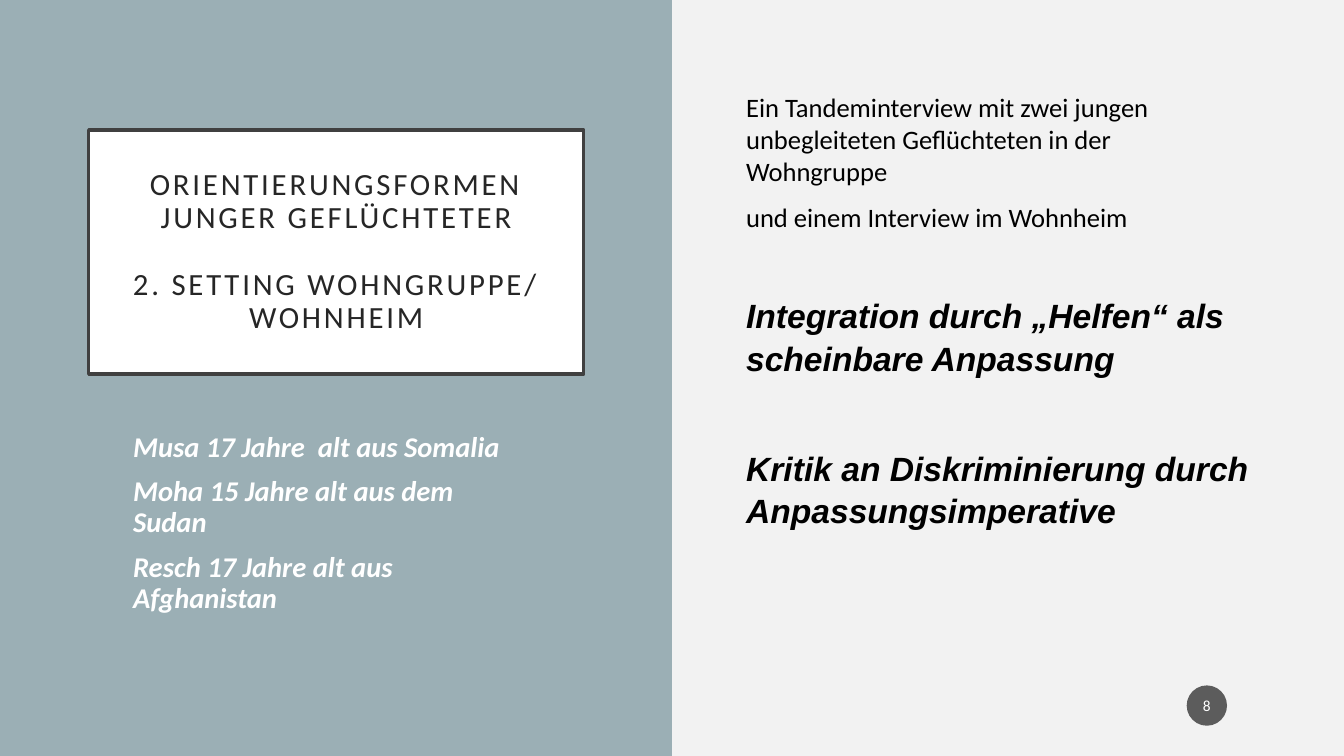
"""Builds the slide on orientation of young refugees in shared housing."""
from lxml import etree
from pptx import Presentation, util as u
from pptx.dml.color import RGBColor
from pptx.enum import shapes, text
from pptx.oxml.ns import qn

W, H = 13.33, 7.5
TITLE = ["ORIENTIERUNGSFORMEN JUNGER GEFLÜCHTETER", "2. SETTING WOHNGRUPPE/ WOHNHEIM"]
PEOPLE = ["Musa 17 Jahre  alt aus Somalia", "Moha 15 Jahre alt aus dem Sudan",
          "Resch 17 Jahre alt aus Afghanistan"]
INTRO = ["Ein Tandeminterview mit zwei jungen unbegleiteten Geflüchteten in der Wohngruppe",
         "und einem Interview im Wohnheim"]
THESES = ["Integration durch „Helfen“ als scheinbare Anpassung",
          "Kritik an Diskriminierung durch Anpassungsimperative"]
NUMBER = "8"

PLAIN = dict(size=19, color="000000", before=10)
THESIS = dict(size=24, color="000000", font="Arial", strong=True, line=1.06)
PERSON = dict(size=20.4, color="FFFFFF", strong=True, line=0.9, before=10)
HEADING = dict(size=22, color="262626", line=0.9, align=text.PP_ALIGN.CENTER)
BADGE = dict(size=11, color="FFFFFF", align=text.PP_ALIGN.CENTER)


def rgb(value):
    return RGBColor.from_string(value)


def place(sp, left, top, width, height):
    sp.left, sp.top, sp.width, sp.height = map(u.Inches, (left, top, width, height))


def write(sp, items, anchor=text.MSO_ANCHOR.TOP, insets=(0.1, 0.05, 0.1, 0.05)):
    tf = sp.text_frame
    tf.word_wrap, tf.auto_size, tf.vertical_anchor = True, text.MSO_AUTO_SIZE.NONE, anchor
    tf.margin_left, tf.margin_top, tf.margin_right, tf.margin_bottom = map(u.Inches, insets)
    for i, (words, style) in enumerate(items):
        p = tf.paragraphs[0] if i == 0 else tf.add_paragraph()
        p.text = words
        p.alignment = style.get("align", text.PP_ALIGN.LEFT)
        p.line_spacing = style.get("line", 1.0)
        p.space_before = u.Pt(style.get("before", 0) if i else 0)
        p.space_after = u.Pt(0)
        p.font.name, p.font.size = style.get("font", "Calibri"), u.Pt(style["size"])
        p.font.bold = p.font.italic = style.get("strong", False)
        p.font.color.rgb = rgb(style["color"])
        pPr = p._p.get_or_add_pPr()
        pPr.set("marL", "0")
        pPr.set("indent", "0")
        bullet = etree.Element(qn("a:buNone"))
        pPr.find(qn("a:defRPr")).addprevious(bullet)


def add_shape(s, kind, box, color):
    sp = s.shapes.add_shape(kind, *map(u.Inches, box))
    sp.shadow.inherit = False
    sp.fill.solid()
    sp.fill.fore_color.rgb = rgb(color)
    sp.line.fill.background()
    return sp


def main():
    prs = Presentation()
    prs.slide_width, prs.slide_height = u.Inches(W), u.Inches(H)
    s = prs.slides.add_slide(prs.slide_layouts[7])
    s.background.fill.solid()
    s.background.fill.fore_color.rgb = rgb("F2F2F2")
    title, findings, people = s.placeholders

    panel = add_shape(s, shapes.MSO_SHAPE.RECTANGLE, (0, 0, W / 2, H), "9BAFB5")
    title._element.addprevious(panel._element)

    place(title, 0.88, 1.29, 4.91, 2.42)
    title.fill.solid()
    title.fill.fore_color.rgb = rgb("FFFFFF")
    title.line.color.rgb = rgb("404040")
    title.line.width = u.Pt(2.5)
    write(title, [(t, dict(HEADING, before=24)) for t in TITLE],
          text.MSO_ANCHOR.MIDDLE, (0.2,) * 4)
    for p in title.text_frame.paragraphs:
        for r in p.runs:
            r.font._element.set("spc", "200")

    place(findings, 7.3, 0.85, 5.27, 5.74)
    write(findings, [(t, PLAIN) for t in INTRO]
          + [(t, dict(THESIS, before=gap)) for t, gap in zip(THESES, (43, 48))])

    place(people, 1.22, 3.88, 4.15, 2.64)
    write(people, [(t, PERSON) for t in PEOPLE], insets=(0.1, 0.41, 0.1, 0.05))

    badge = add_shape(s, shapes.MSO_SHAPE.OVAL, (11.77, 6.8, 0.4, 0.4), "1D1D1D")
    color = badge._element.spPr.find(qn("a:solidFill"))[0]
    etree.SubElement(color, qn("a:alpha")).set("val", "70000")
    write(badge, [(NUMBER, BADGE)], text.MSO_ANCHOR.MIDDLE, (0.02, 0.05, 0.02, 0.05))
    prs.save("out.pptx")


if __name__ == "__main__":
    main()
